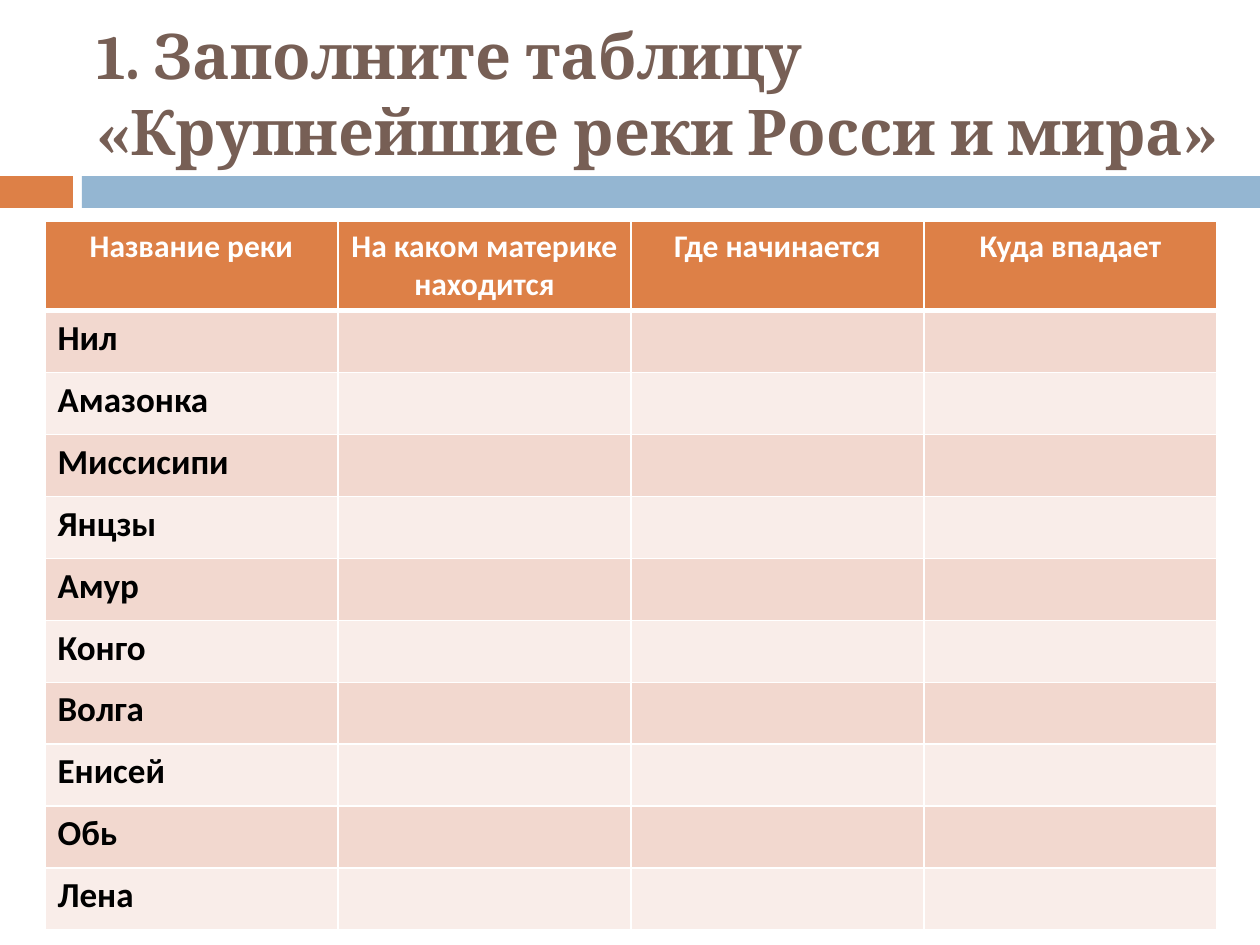
"""Build a slide with a fill-in table of the largest rivers."""
from lxml.etree import SubElement
from pptx import Presentation
from pptx.dml.color import RGBColor
from pptx.enum.shapes import MSO_SHAPE
from pptx.enum.text import MSO_ANCHOR, MSO_AUTO_SIZE, PP_ALIGN
from pptx.oxml.ns import qn
from pptx.util import Emu, Pt

COLORS = {"orange": "DD8047", "blue": "94B6D2", "brown": "775F55", "white": "FFFFFF",
          "black": "000000", "odd": "F2D8CF", "even": "F9EDE9"}
HEADERS = ["Название реки", "На каком материке находится", "Где начинается", "Куда впадает"]
RIVERS = ["Нил", "Амазонка", "Миссисипи", "Янцзы", "Амур",
          "Конго", "Волга", "Енисей", "Обь", "Лена"]
FORMATS = {
    "title": {"name": "Cambria", "size": Pt(36), "bold": True, "color": "brown"},
    "header": {"name": "Calibri", "size": Pt(18), "bold": True, "color": "white"},
    "river": {"name": "Calibri", "size": Pt(20), "bold": True, "color": "black"},
}


def px(n):
    return Emu(round(n * 914400 / 126))


def format_font(font, style):
    for attr, value in FORMATS[style].items():
        if attr == "color":
            font.color.rgb = RGBColor.from_string(COLORS[value])
        else:
            setattr(font, attr, value)


prs = Presentation()
prs.slide_width, prs.slide_height = px(1260), px(945)
s = prs.slides.add_slide(prs.slide_layouts[5])

for left, width, color in [(0, 73, "orange"), (82, 1178, "blue")]:
    sp = s.shapes.add_shape(MSO_SHAPE.RECTANGLE, px(left), px(176), px(width), px(32))
    sp.shadow.inherit = False
    sp.fill.solid()
    sp.fill.fore_color.rgb = RGBColor.from_string(COLORS[color])
    sp.line.fill.background()

title = s.shapes.title
title.left, title.top, title.width, title.height = px(84), px(16), px(1160), px(152)
tf = title.text_frame
tf.text = "1. Заполните таблицу \v«Крупнейшие реки Росси и мира»"
tf.word_wrap = True
tf.auto_size = MSO_AUTO_SIZE.NONE
tf.vertical_anchor = MSO_ANCHOR.MIDDLE
p = tf.paragraphs[0]
p.alignment = PP_ALIGN.LEFT
for r in p.runs:
    format_font(r.font, "title")

rows = [HEADERS] + [[river, "", "", ""] for river in RIVERS]
row_height, col_width = 62, 293
table = s.shapes.add_table(len(rows), len(HEADERS), px(45), px(221), px(col_width * len(HEADERS)),
                           px(row_height * len(rows))).table

for i, row in enumerate(rows):
    style = "river" if i else "header"
    fill = ("odd" if i % 2 else "even") if i else "orange"
    for j, text in enumerate(row):
        cell = table.cell(i, j)
        p = cell.text_frame.paragraphs[0]
        if text:
            r = p.add_run()
            r.text = text
            format_font(r.font, style)
        p.alignment = PP_ALIGN.LEFT if i else PP_ALIGN.CENTER
        tcPr = cell._tc.get_or_add_tcPr()
        for side in "LRTB":
            thick = (i, side) in [(0, "B"), (1, "T")]
            ln = SubElement(tcPr, qn(f"a:ln{side}"), w=str(Pt(3 if thick else 1)))
            SubElement(SubElement(ln, qn("a:solidFill")), qn("a:srgbClr"), val=COLORS["white"])
        cell.fill.solid()
        cell.fill.fore_color.rgb = RGBColor.from_string(COLORS[fill])

prs.save("out.pptx")
